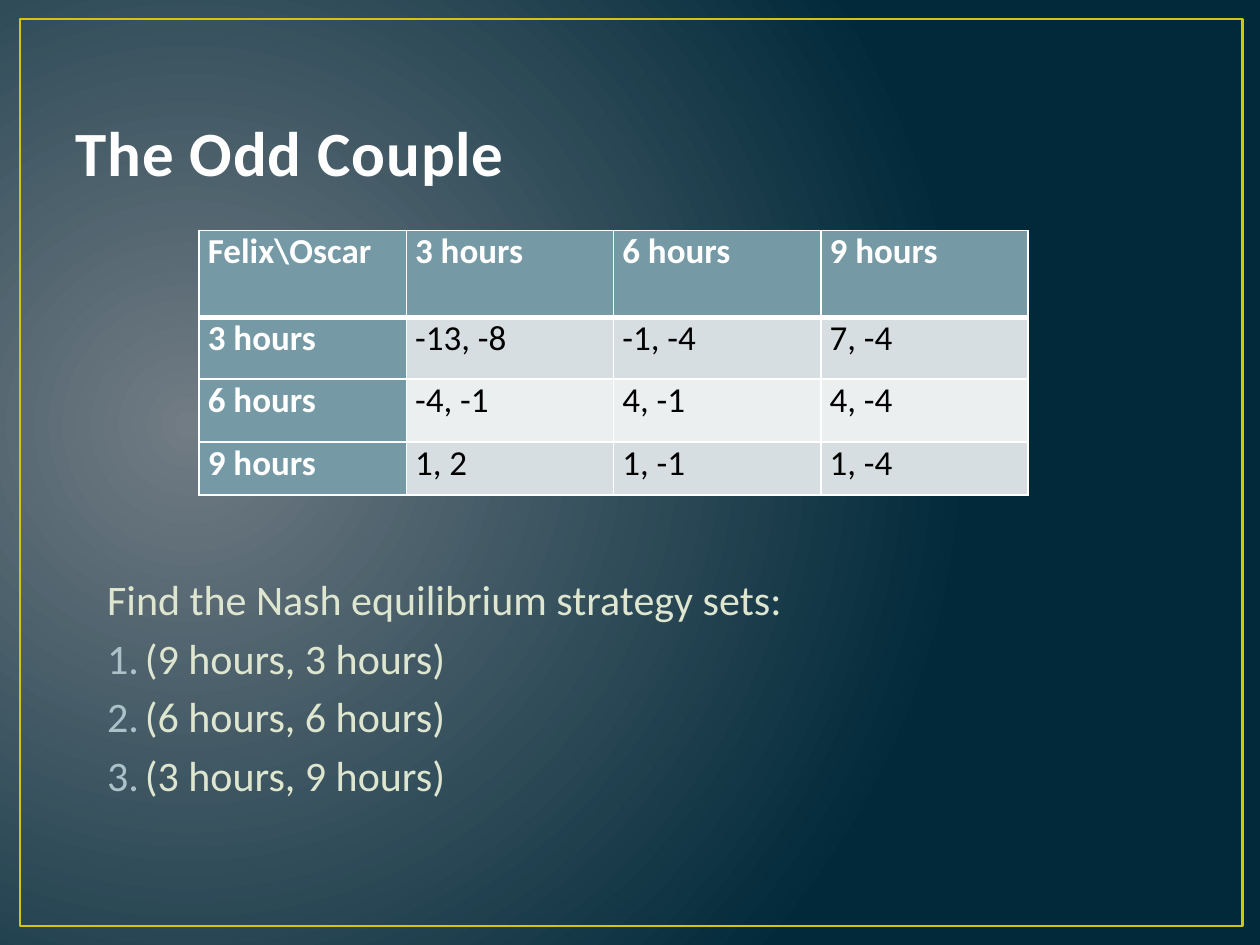
from lxml import etree
from pptx import Presentation
from pptx import util as u
from pptx.dml.color import RGBColor
from pptx.enum import shapes, text
from pptx.oxml import ns


def color(value):
    return RGBColor.from_string(value)


def add_xml(parent, tag, index=None, fill=None, **attributes):
    """Add a drawing element, with an optional solid fill, to parent."""
    child = etree.Element(ns.qn(tag), {key: str(item) for key, item in attributes.items()})
    parent.insert(len(parent) if index is None else index, child)
    if fill:
        solid = etree.SubElement(child, ns.qn("a:solidFill"))
        etree.SubElement(solid, ns.qn("a:srgbClr"), val=fill)
    return child


deck = Presentation()
deck.slide_width, deck.slide_height = u.Inches(10), u.Inches(7.5)
page = deck.slides.add_slide(deck.slide_layouts[1])

# Background: round gradient from the left side
backdrop = page.background.fill
backdrop.gradient()
for stop, (position, shade) in zip(backdrop.gradient_stops, [(0, "717C84"), (1, "01293A")]):
    stop.position = position
    stop.color.rgb = color(shade)
gradient = page.element.find(".//" + ns.qn("a:gradFill"))
gradient.remove(gradient.find(ns.qn("a:lin")))
circle = add_xml(gradient, "a:path", path="circle")
add_xml(circle, "a:fillToRect", l=15000, t=50000, r=85000, b=60000)

# Frame behind everything
frame = page.shapes.add_shape(shapes.MSO_SHAPE.RECTANGLE, u.Inches(0.16), u.Inches(0.15),
                              u.Inches(9.7), u.Inches(7.2))
frame.shadow.inherit = False
frame.fill.background()
frame.line.color.rgb = color("CFC60D")
frame.line.width = u.Pt(1.5)
page.shapes.title.element.addprevious(frame.element)

# Title and list placeholders
title, body = page.shapes.title, page.placeholders[1]
placements = [(title, (0.5, 0.3, 9, 1.25)), (body, (0.75, 4.5, 9.08, 2.53))]
for box, (left, top, width, height) in placements:
    place = {"left": left, "top": top, "width": width, "height": height}
    for name, value in place.items():
        setattr(box, name, u.Inches(value))
    box.text_frame.word_wrap = True
    box.text_frame.auto_size = text.MSO_AUTO_SIZE.NONE

title.text_frame.vertical_anchor = text.MSO_ANCHOR.BOTTOM
para = title.text_frame.paragraphs[0]
para.alignment = text.PP_ALIGN.LEFT
span = para.add_run()
span.text = "The Odd Couple"
for name, value in {"size": u.Pt(36), "name": "Calibri", "bold": True}.items():
    setattr(span.font, name, value)
span.font.color.rgb = color("FEFEFE")
title_format = span._r.get_or_add_rPr()
title_format.set("spc", "50")
add_xml(title_format, "a:ln", index=0, fill="384F55", w=u.Pt(1.05))

# Question and numbered answers
lines = ["Find the Nash equilibrium strategy sets:",
         "(9 hours, 3 hours)", "(6 hours, 6 hours)", "(3 hours, 9 hours)"]
body.text_frame.text = "\n".join(lines)
for number, para in enumerate(body.text_frame.paragraphs):
    font = para.runs[0].font
    font.size, font.name = u.Pt(24), "Calibri"
    font.color.rgb = color("DFE6D0")
    settings = para._p.get_or_add_pPr()
    indent = u.Inches(0.3) if number else 0
    settings.set("marL", str(indent))
    settings.set("indent", str(-indent))
    if number:
        bullet_color = add_xml(settings, "a:buClr")
        add_xml(bullet_color, "a:srgbClr", val="ACC2C9")
        add_xml(settings, "a:buFont", typeface="Calibri")
        add_xml(settings, "a:buAutoNum", type="arabicPeriod")
    else:
        add_xml(settings, "a:buNone")

# Payoff table
payoffs = [["Felix\\Oscar", "3 hours", "6 hours", "9 hours"],
           ["3 hours", "-13, -8", "-1, -4", "7, -4"],
           ["6 hours", "-4, -1", "4, -1", "4, -4"],
           ["9 hours", "1, 2", "1, -1", "1, -4"]]
grid = page.shapes.add_table(4, 4, u.Inches(1.58), u.Inches(1.83),
                             u.Inches(6.58), u.Inches(2.1)).table
grid.first_col = True
for column in grid.columns:
    column.width = u.Inches(6.58 / 4)
for row, height in zip(grid.rows, [0.69, 0.49, 0.5, 0.42]):
    row.height = u.Inches(height)

margins = {"margin_left": 0.07, "margin_right": 0.07, "margin_top": 0, "margin_bottom": 0}
for r, values in enumerate(payoffs):
    for c, value in enumerate(values):
        cell = grid.cell(r, c)
        heading = r == 0 or c == 0
        for name, margin in margins.items():
            setattr(cell, name, u.Inches(margin))
        cell.fill.solid()
        cell.fill.fore_color.rgb = color("759AA5" if heading else "D6DEE1" if r % 2 else "ECEFF0")
        span = cell.text_frame.paragraphs[0].add_run()
        span.text = value
        for name, setting in {"size": u.Pt(20), "name": "Calibri", "bold": heading}.items():
            setattr(span.font, name, setting)
        span.font.color.rgb = color("FFFFFF" if heading else "000000")
        # White rules, heavier under the header row
        widths = {"a:lnL": 1, "a:lnR": 1, "a:lnT": 3 if r == 1 else 1, "a:lnB": 3 if r == 0 else 1}
        for index, (side, width) in enumerate(widths.items()):
            add_xml(cell._tc.get_or_add_tcPr(), side, index, "FFFFFF", w=u.Pt(width))

deck.save("out.pptx")
